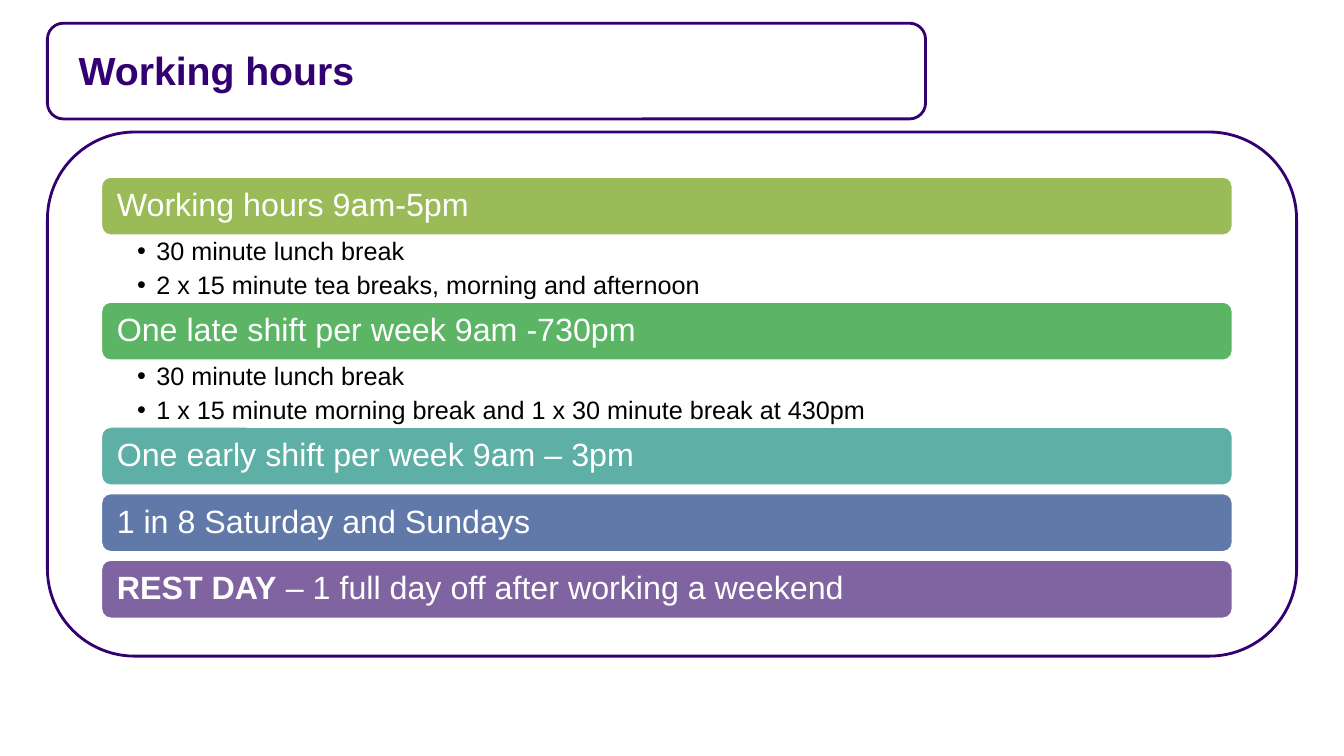
from lxml.etree import SubElement
from pptx import Presentation
from pptx.dml.color import RGBColor
from pptx.enum.shapes import MSO_SHAPE
from pptx.enum.text import MSO_ANCHOR, MSO_AUTO_SIZE, PP_ALIGN
from pptx.oxml.ns import qn
from pptx.util import Inches, Pt

COLORS = {
    "purple": "330072", "white": "FFFFFF", "black": "000000",
    "olive": "9BBB59", "green": "5CB565", "teal": "5EAFA6",
    "blue": "6179A8", "violet": "8064A2",
}
BAR_HEIGHT = 0.59
LIST_HEIGHT = 0.65
BAR_GAP = 0.07

SHIFTS = [
    ("olive", [("Working hours 9am-5pm", False)],
     ["30 minute lunch break",
      "2 x 15 minute tea breaks, morning and afternoon"]),
    ("green", [("One late shift per week 9am -730pm", False)],
     ["30 minute lunch break",
      "1 x 15 minute morning break and 1 x 30 minute break at 430pm"]),
    ("teal", [("One early shift per week 9am – 3pm", False)], []),
    ("blue", [("1 in 8 Saturday and Sundays", False)], []),
    ("violet", [("REST DAY", True),
                (" – 1 full day off after working a weekend", False)], []),
]


def color(name):
    return RGBColor.from_string(COLORS[name])


def apply_format(target, values):
    for name, value in values.items():
        setattr(target, name, value)


def place(part, box):
    names = ("left", "top", "width", "height")
    apply_format(part, dict(zip(names, map(Inches, box))))


def format_frame(frame, anchor, insets):
    names = ("margin_left", "margin_top", "margin_right", "margin_bottom")
    apply_format(frame, dict(zip(names, map(Inches, insets))))
    apply_format(frame, {"word_wrap": True, "vertical_anchor": anchor,
                         "auto_size": MSO_AUTO_SIZE.NONE})


def write(paragraph, runs, size, ink, spacing):
    apply_format(paragraph, {"alignment": PP_ALIGN.LEFT, "space_before": Pt(0),
                             **spacing})
    for wording, bold in runs:
        run = paragraph.add_run()
        run.text = wording
        apply_format(run.font, {"name": "Arial", "size": Pt(size), "bold": bold})
        run.font.color.rgb = color(ink)


def add_rounded(slide, box, fill, line):
    rounded = slide.shapes.add_shape(MSO_SHAPE.ROUNDED_RECTANGLE,
                                     *map(Inches, box))
    rounded.shadow.inherit = False
    rounded.fill.solid()
    rounded.fill.fore_color.rgb = color(fill)
    rounded.line.color.rgb = color(line)
    rounded.line.width = Pt(2)
    return rounded


def add_border(slide, box):
    border = add_rounded(slide, box, "white", "purple")
    white = border.element.spPr.find(qn("a:solidFill"))[0]
    SubElement(white, qn("a:alpha"), val="90000")
    slide.shapes.title.element.addprevious(border.element)


def add_heading(slide, box):
    left, top, width, height = box
    add_border(slide, box)
    heading = slide.shapes.title
    place(heading, (left + 0.21, top + 0.16, width - 0.42, height - 0.35))
    format_frame(heading.text_frame, MSO_ANCHOR.MIDDLE, (0.1, 0.05, 0.1, 0.05))
    write(heading.text_frame.paragraphs[0], [("Working hours", True)],
          28, "purple", {})


def add_shift_bar(slide, box, fill, runs):
    bar = add_rounded(slide, box, fill, "white")
    format_frame(bar.text_frame, MSO_ANCHOR.MIDDLE, (0.13, 0.03, 0.13, 0.03))
    write(bar.text_frame.paragraphs[0], runs, 23, "white",
          {"line_spacing": 0.9})


def fill_breaks(breaks, box, items):
    place(breaks, box)
    frame = breaks.text_frame
    format_frame(frame, MSO_ANCHOR.TOP, (0.36, 0.03, 0.18, 0.03))
    for number, item in enumerate(items):
        paragraph = frame.add_paragraph() if number else frame.paragraphs[0]
        write(paragraph, [(item, False)], 18, "black",
              {"line_spacing": 0.9, "space_after": Pt(5)})
        properties = paragraph._p.get_or_add_pPr()
        properties.set("marL", str(Inches(0.19)))
        properties.set("indent", str(Inches(-0.19)))
        SubElement(properties, qn("a:buFont"), typeface="Arial")
        SubElement(properties, qn("a:buChar"), char="•")


def add_shifts(slide, box):
    left, top, width, _ = box
    add_border(slide, box)
    bar_left, bar_width = left + 0.53, width - 1.16
    y = top + 0.44
    lists = iter([part for part in slide.placeholders
                  if part.placeholder_format.idx in (1, 2)])
    for fill, runs, items in SHIFTS:
        add_shift_bar(slide, (bar_left, y, bar_width, BAR_HEIGHT), fill, runs)
        y += BAR_HEIGHT
        if items:
            fill_breaks(next(lists), (bar_left, y, bar_width, LIST_HEIGHT), items)
        y += LIST_HEIGHT if items else BAR_GAP


def main():
    deck = Presentation()
    deck.slide_width, deck.slide_height = Inches(13.33), Inches(7.5)
    slide = deck.slides.add_slide(deck.slide_layouts.get_by_name("Two Content"))
    add_shifts(slide, (0.47, 1.31, 12.39, 5.2))
    add_heading(slide, (0.47, 0.23, 8.71, 0.95))
    deck.save("out.pptx")


if __name__ == "__main__":
    main()
